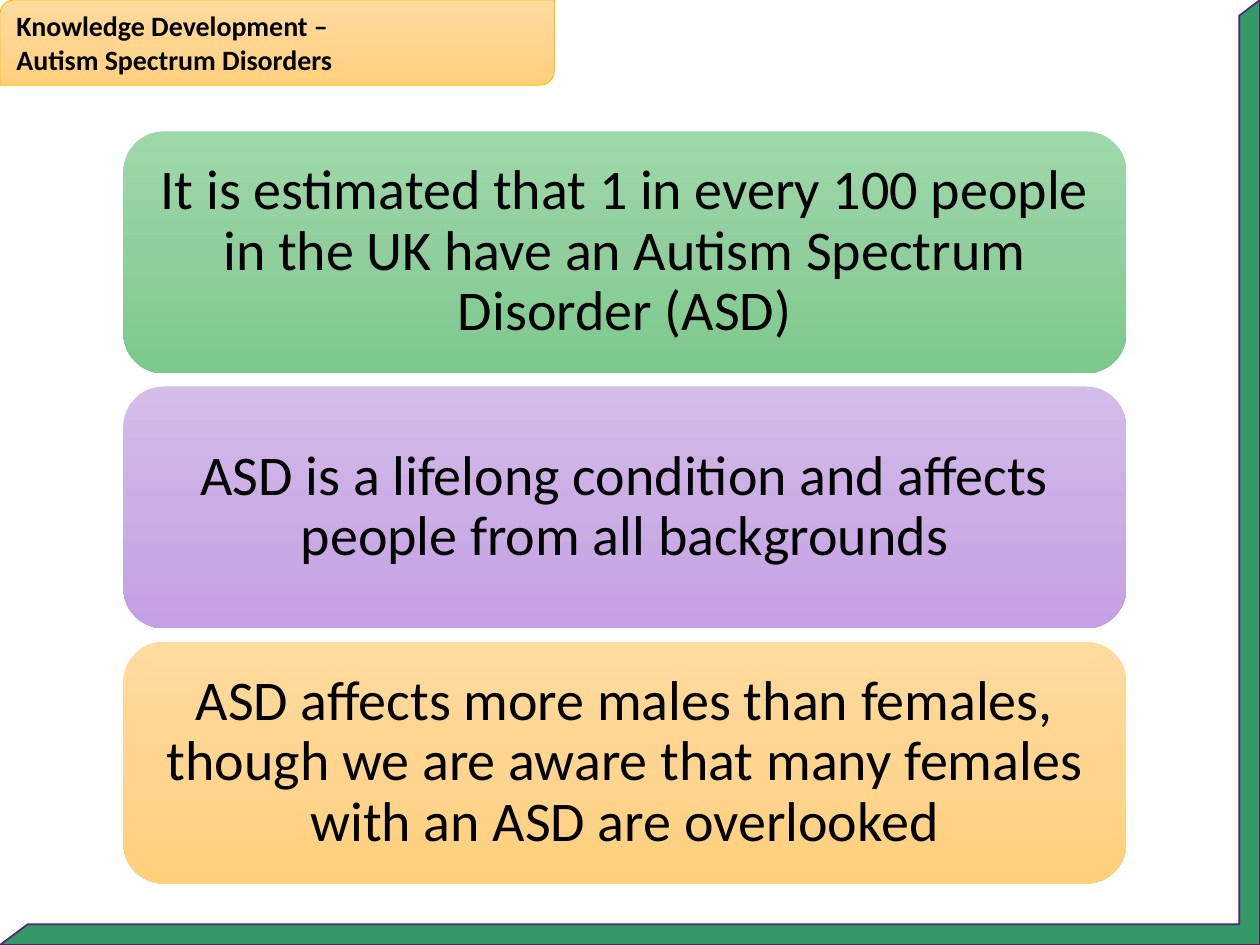
from copy import deepcopy
from pptx import Presentation
from pptx.dml.color import RGBColor
from pptx.enum.shapes import MSO_SHAPE
from pptx.enum.text import MSO_ANCHOR, PP_ALIGN
from pptx.oxml.ns import qn
from pptx.util import Inches, Pt

GREEN = ("9DD8A9", "90CF9D", "7CC98C")
PURPLE = ("D4BCEA", "CBAEE5", "C5A0E4")
ORANGE = ("FFDB9E", "FFD590", "FFD07C")


def rgb(code):
    return RGBColor.from_string(code)


class Deck:
    """Draws styled elements on one slide, placed by shares of its size."""
    face = "Calibri"
    ink = "000000"

    def __init__(self):
        self.show = Presentation()
        self.show.slide_width, self.show.slide_height = Inches(10), Inches(7.5)
        self.slide = self.show.slides.add_slide(self.show.slide_layouts[6])

    def shape(self, kind, x, y, w, h, edge=None, width=1):
        wide, high = self.show.slide_width, self.show.slide_height
        item = self.slide.shapes.add_shape(
            kind, int(x * wide), int(y * high), int(w * wide), int(h * high))
        item.shadow.inherit = False
        if edge:
            item.line.color.rgb = rgb(edge)
            item.line.width = Pt(width)
        else:
            item.line.fill.background()
        return item

    def shade(self, item, tones):
        item.fill.gradient()
        item.fill.gradient_angle = 270
        first = item._element.spPr.find(".//" + qn("a:gs"))
        first.addnext(deepcopy(first))
        for stop, tone, place in zip(item.fill.gradient_stops, tones, (0, 0.5, 1)):
            stop.color.rgb = rgb(tone)
            stop.position = place

    def label(self, item, lines, size, align, bold=False):
        frame = item.text_frame
        frame.word_wrap = True
        frame.vertical_anchor = MSO_ANCHOR.MIDDLE
        frame.text = "\n".join(lines)
        for para in frame.paragraphs:
            para.alignment = align
            para.font.name, para.font.size = self.face, Pt(size)
            para.font.bold = bold
            para.font.color.rgb = rgb(self.ink)
        return frame

    def border(self):
        item = self.shape(MSO_SHAPE.HALF_FRAME, 0, 0, 1, 1, "532476")
        item.rotation = 180
        item.adjustments[0] = item.adjustments[1] = 0.022
        item.fill.solid()
        item.fill.fore_color.rgb = rgb("339966")

    def title(self, lines):
        item = self.shape(MSO_SHAPE.ROUND_2_DIAG_RECTANGLE, 0, 0, 0.44, 0.09,
                          "FFC000", 0.5)
        self.shade(item, ORANGE)
        self.label(item, lines, 16, PP_ALIGN.LEFT, True)

    def card(self, row, text, tones):
        item = self.shape(MSO_SHAPE.ROUNDED_RECTANGLE,
                          0.098, 0.139 + 0.27 * row, 0.796, 0.256)
        self.shade(item, tones)
        frame = self.label(item, [text], 32, PP_ALIGN.CENTER)
        frame.margin_left = frame.margin_right = Inches(0.13)
        frame.margin_top = frame.margin_bottom = Inches(0.13)
        frame.paragraphs[0].line_spacing = 0.9


def main():
    deck = Deck()
    deck.border()
    facts = (
        ("It is estimated that 1 in every 100 people in the UK have an "
         "Autism Spectrum Disorder (ASD)", GREEN),
        ("ASD is a lifelong condition and affects people from all backgrounds",
         PURPLE),
        ("ASD affects more males than females, though we are aware that many "
         "females with an ASD are overlooked", ORANGE),
    )
    for row, (text, tones) in enumerate(facts):
        deck.card(row, text, tones)
    deck.title(["Knowledge Development –", "Autism Spectrum Disorders"])
    deck.show.save("out.pptx")


if __name__ == "__main__":
    main()
